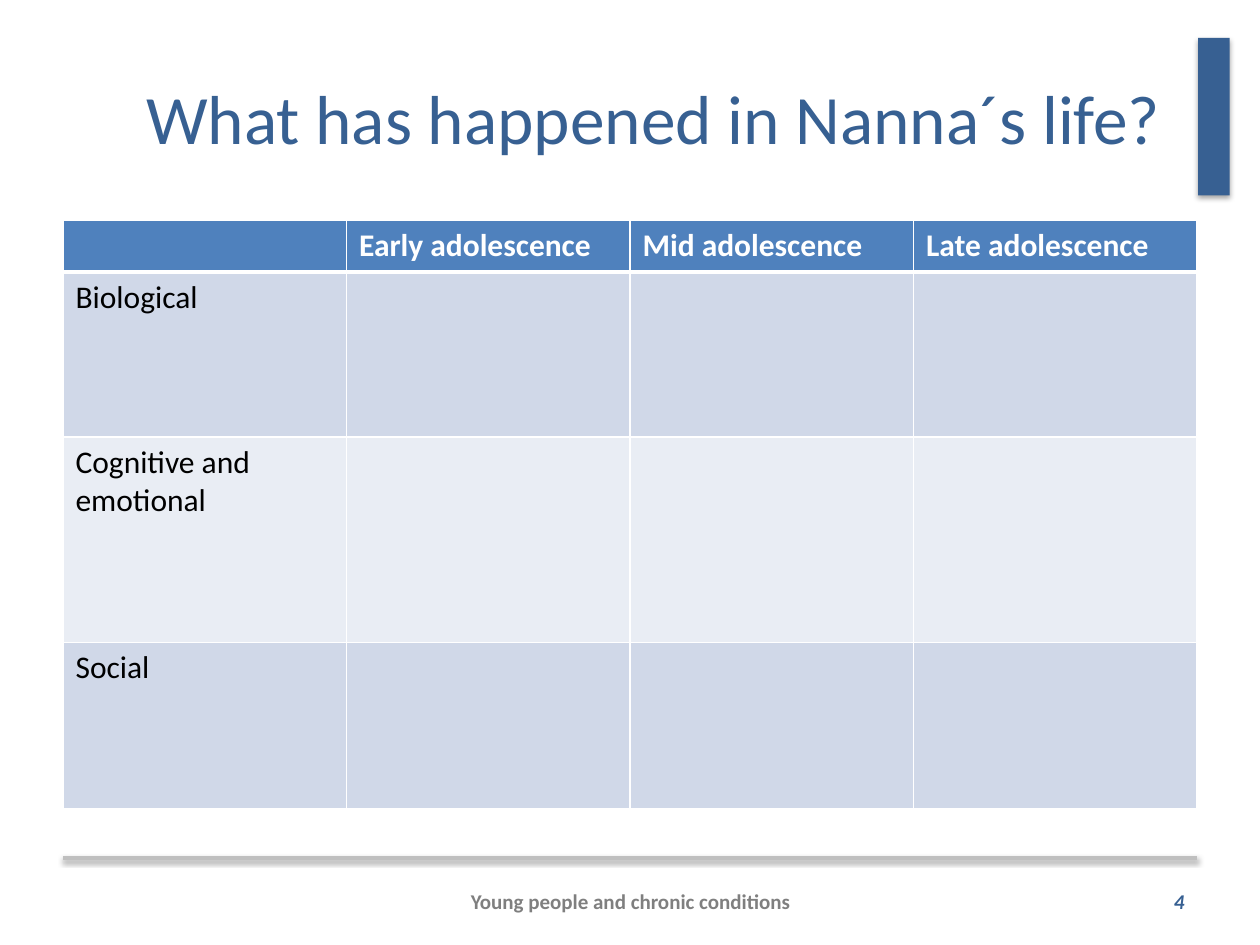
from dataclasses import dataclass

from lxml import etree
from pptx import Presentation
from pptx.dml.color import RGBColor
from pptx.enum import shapes, text
from pptx.oxml import ns
from pptx.util import Inches, Pt


@dataclass(frozen=True)
class Theme:
    font: str = "Calibri"
    navy: str = "376092"
    header: str = "4F81BD"
    bands: tuple = ("D0D8E8", "E9EDF4")
    rule: str = "BFBFBF"
    grey: str = "7F7F7F"
    white: str = "FFFFFF"
    black: str = "000000"
    title_size: float = 39.6
    table_size: float = 18
    footer_size: float = 12


theme = Theme()


def add_span(para, wording, size, color, bold=False, italic=False):
    span = para.add_run()
    span.text = wording
    span.font.name = theme.font
    span.font.size = Pt(size)
    span.font.color.rgb = RGBColor.from_string(color)
    span.font.bold = bold
    span.font.italic = italic


def add_color(parent, color):
    return etree.SubElement(parent, ns.qn("a:srgbClr"), val=color)


deck = Presentation()
deck.slide_width = Inches(10)
deck.slide_height = Inches(7.5)
page = deck.slides.add_slide(deck.slide_layouts[6])

# Accent bar and footer rule, each with a soft shadow straight below
bar = page.shapes.add_shape(
    shapes.MSO_SHAPE.RECTANGLE, Inches(9.51), Inches(0.3), Inches(0.25), Inches(1.25)
)
bar.shadow.inherit = False
bar.fill.solid()
bar.fill.fore_color.rgb = RGBColor.from_string(theme.navy)
bar.line.fill.background()

rule = page.shapes.add_connector(
    shapes.MSO_CONNECTOR.STRAIGHT, Inches(0.5), Inches(6.81), Inches(9.5), Inches(6.81)
)
rule.line.color.rgb = RGBColor.from_string(theme.rule)
rule.line.width = Pt(2)
etree.SubElement(rule._element.spPr, ns.qn("a:effectLst"))

for item, distance, opacity in ((bar, 1.8, 35), (rule, 1.6, 38)):
    effects = item._element.spPr.find(ns.qn("a:effectLst"))
    shadow = etree.SubElement(
        effects, ns.qn("a:outerShdw"), blurRad=str(Pt(3.1)), dist=str(Pt(distance)),
        dir=str(90 * 60000), rotWithShape="0",
    )
    etree.SubElement(add_color(shadow, theme.black), ns.qn("a:alpha"), val=str(opacity * 1000))

# Title, footer and page number
right, center = text.PP_ALIGN.RIGHT, text.PP_ALIGN.CENTER
labels = [
    ("What has happened in Nanna´s life?", (0.5, 0.3, 8.81, 1.25), right,
     theme.title_size, theme.navy, False, False),
    ("Young people and chronic conditions", (3.42, 6.95, 3.17, 0.4), center,
     theme.footer_size, theme.grey, True, False),
    ("4", (7.17, 6.95, 2.33, 0.4), right,
     theme.footer_size, theme.navy, True, True),
]
for wording, place, alignment, size, color, bold, italic in labels:
    box = page.shapes.add_textbox(*(Inches(length) for length in place))
    box.text_frame.word_wrap = True
    box.text_frame.vertical_anchor = text.MSO_ANCHOR.MIDDLE
    para = box.text_frame.paragraphs[0]
    para.alignment = alignment
    add_span(para, wording, size, color, bold, italic)

# Life areas by stage of adolescence, left open to be filled in
stages = ["", "Early adolescence", "Mid adolescence", "Late adolescence"]
areas = ["Biological", "Cognitive and emotional", "Social"]
rows = [stages] + [[area, "", "", ""] for area in areas]
row_heights = [0.41, 1.31, 1.63, 1.32]

table = page.shapes.add_table(
    len(rows), len(stages), Inches(0.5), Inches(1.75), Inches(9), Inches(sum(row_heights))
).table
for column in table.columns:
    column.width = Inches(2.25)

for row_index, (wordings, height) in enumerate(zip(rows, row_heights)):
    table.rows[row_index].height = Inches(height)
    is_header = row_index == 0
    fill = theme.header if is_header else theme.bands[(row_index - 1) % 2]
    color = theme.white if is_header else theme.black
    borders = {"L": 1, "R": 1, "T": 3 if row_index == 1 else 1, "B": 3 if is_header else 1}
    for column_index, wording in enumerate(wordings):
        cell = table.cell(row_index, column_index)
        properties = cell._tc.get_or_add_tcPr()
        for side, width in borders.items():
            border = etree.SubElement(properties, ns.qn(f"a:ln{side}"), w=str(Pt(width)))
            add_color(etree.SubElement(border, ns.qn("a:solidFill")), theme.white)
        cell.fill.solid()
        cell.fill.fore_color.rgb = RGBColor.from_string(fill)
        if wording:
            add_span(cell.text_frame.paragraphs[0], wording, theme.table_size, color, is_header)

deck.save("out.pptx")
